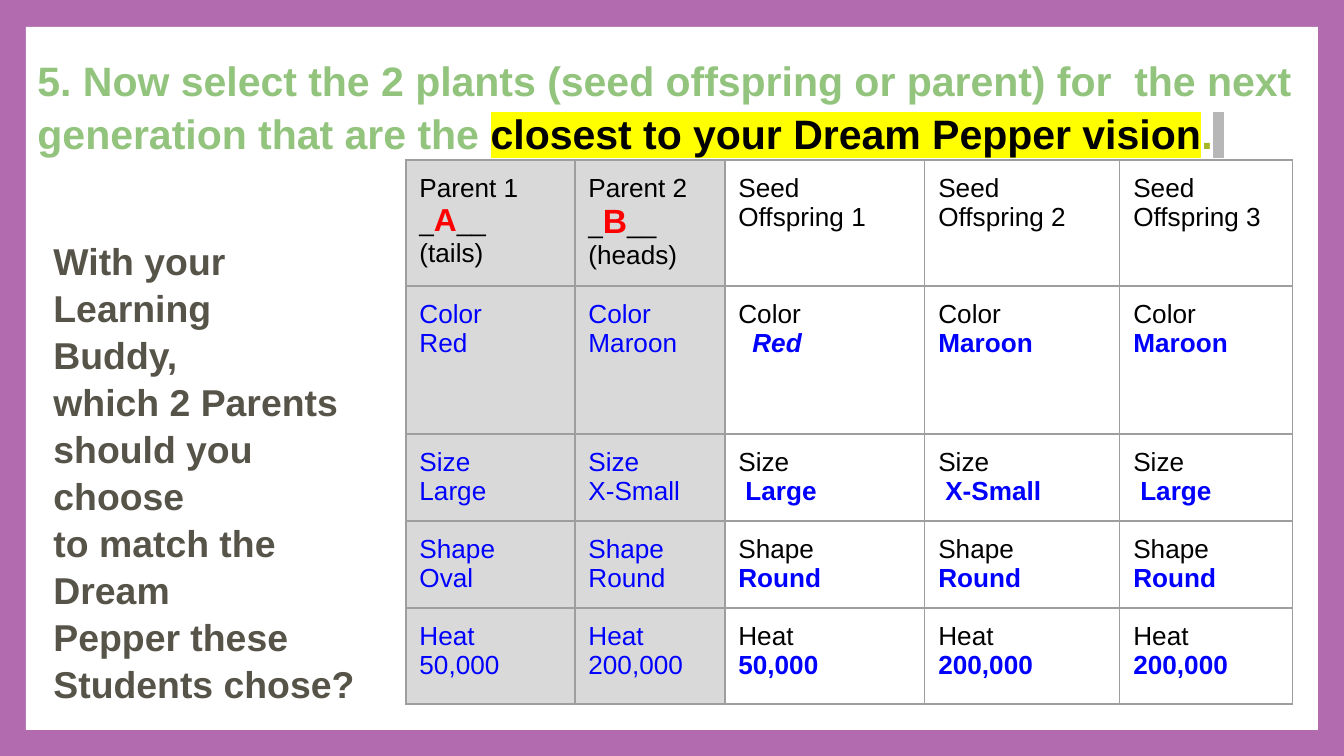
import pptx
import pptx.dml.color
import pptx.enum.shapes
import pptx.enum.text
import pptx.oxml
import pptx.oxml.ns
import pptx.util

SCALE = 9144000 / 1344
BLACK, BLUE, RED, GRAY = "000000", "0000FF", "FF0000", "D9D9D9"
COLUMNS = [169, 150, 200, 195, 173]
ROWS = [126, 148, 87, 87, 96]
PARENTS = [("Parent 1", "A", 17, "(tails)"), ("Parent 2", "B", 18, "(heads)")]
TRAITS = [
    ("Color", ["Red", "Maroon", "Red", "Maroon", "Maroon"]),
    ("Size", ["Large", "X-Small", "Large", "X-Small", "Large"]),
    ("Shape", ["Oval", "Round", "Round", "Round", "Round"]),
    ("Heat", ["50,000", "200,000", "50,000", "200,000", "200,000"]),
]
INDENTS = {("Color", 2): 14, ("Size", 2): 7, ("Size", 3): 7, ("Size", 4): 7}
QUESTION = [
    "With your Learning",
    "Buddy,",
    "which 2 Parents",
    "should you choose",
    "to match the Dream",
    "Pepper these",
    "Students chose?",
]


def px(n):
    return pptx.util.Emu(round(n * SCALE))


def color(value):
    return pptx.dml.color.RGBColor.from_string(value)


def set_all(obj, values):
    for name, value in values.items():
        setattr(obj, name, value)


def add_run(p, text, size, ink, bold=False, italic=False, highlight=None):
    r = p.add_run()
    r.text = text
    set_all(r.font, {"name": "Arial", "size": pptx.util.Pt(size), "bold": bold, "italic": italic})
    r.font.color.rgb = color(ink)
    if highlight:
        mark = pptx.oxml.parse_xml(
            f'<a:highlight {pptx.oxml.ns.nsdecls("a")}><a:srgbClr val="{highlight}"/></a:highlight>'
        )
        r.font.fill._xPr.find(pptx.oxml.ns.qn("a:solidFill")).addnext(mark)


def add_panel(s, left, top, width, height):
    sp = s.shapes.add_shape(
        pptx.enum.shapes.MSO_SHAPE.RECTANGLE, px(left), px(top), px(width), px(height)
    )
    sp.shadow.inherit = False
    sp.fill.solid()
    sp.fill.fore_color.rgb = color("FFFFFF")
    sp.line.fill.background()
    s.shapes._spTree.insert(2, sp._element)


def fill_placeholder(sp, box, lines, spacing):
    set_all(sp, dict(zip(("left", "top", "width", "height"), map(px, box))))
    tf = sp.text_frame
    sides = ("margin_left", "margin_top", "margin_right", "margin_bottom")
    set_all(tf, dict.fromkeys(sides, pptx.util.Inches(0.1)))
    set_all(tf, {
        "word_wrap": True,
        "auto_size": pptx.enum.text.MSO_AUTO_SIZE.NONE,
        "vertical_anchor": pptx.enum.text.MSO_ANCHOR.TOP,
    })
    for i, runs in enumerate(lines):
        p = tf.add_paragraph() if i else tf.paragraphs[0]
        pPr = p._p.get_or_add_pPr()
        pPr.set("marL", "0")
        pPr.set("indent", "0")
        set_all(p, {
            "alignment": pptx.enum.text.PP_ALIGN.LEFT,
            "line_spacing": spacing,
            "space_before": pptx.util.Pt(0),
            "space_after": pptx.util.Pt(0),
        })
        pPr.append(pptx.oxml.parse_xml(f'<a:buNone {pptx.oxml.ns.nsdecls("a")}/>'))
        for run in runs:
            add_run(p, *run)


def add_borders(cell):
    tcPr = cell._tc.get_or_add_tcPr()
    for i, side in enumerate(("lnL", "lnR", "lnT", "lnB")):
        tcPr.insert(i, pptx.oxml.parse_xml(
            f'<a:{side} {pptx.oxml.ns.nsdecls("a")} w="9525"><a:solidFill>'
            f'<a:srgbClr val="9E9E9E"/></a:solidFill></a:{side}>'
        ))


def fill_cell(cell, lines, shaded, indent=0):
    sides = ("margin_left", "margin_top", "margin_right", "margin_bottom")
    set_all(cell, dict.fromkeys(sides, pptx.util.Inches(0.1)))
    if shaded:
        cell.fill.solid()
        cell.fill.fore_color.rgb = color(GRAY)
    else:
        cell.fill.background()
    add_borders(cell)
    tf = cell.text_frame
    for i, runs in enumerate(lines):
        p = tf.add_paragraph() if i else tf.paragraphs[0]
        if i and indent:
            p._p.get_or_add_pPr().set("marL", str(px(indent)))
        for run in runs:
            add_run(p, *run)


def add_trait_table(s, left, top):
    frame = s.shapes.add_table(
        len(ROWS), len(COLUMNS), px(left), px(top), px(sum(COLUMNS)), px(sum(ROWS))
    )
    table = frame.table
    set_all(table, {"first_row": False, "horz_banding": False})
    for column, width in zip(table.columns, COLUMNS):
        column.width = px(width)
    for row, height in zip(table.rows, ROWS):
        row.height = px(height)
    for c, (parent, letter, size, side) in enumerate(PARENTS):
        blank = [("_", 14, BLACK), (letter, size, RED, True), ("__", 14, BLACK)]
        fill_cell(table.cell(0, c), [[(parent, 14, BLACK)], blank, [(side, 14, BLACK)]], True)
    for n in range(1, 4):
        lines = [[("Seed", 14, BLACK)], [(f"Offspring {n}", 14, BLACK)]]
        fill_cell(table.cell(0, n + 1), lines, False)
    for r, (trait, values) in enumerate(TRAITS, 1):
        for c, value in enumerate(values):
            parent = c < len(PARENTS)
            italic = (trait, c) == ("Color", 2)
            lines = [
                [(trait, 14, BLUE if parent else BLACK)],
                [(value, 14, BLUE, not parent, italic)],
            ]
            fill_cell(table.cell(r, c), lines, parent, INDENTS.get((trait, c), 0))


def main():
    prs = pptx.Presentation()
    set_all(prs, {"slide_width": px(1344), "slide_height": px(756)})
    s = prs.slides.add_slide(prs.slide_layouts[1])
    s.background.fill.solid()
    s.background.fill.fore_color.rgb = color("B16BAE")
    add_panel(s, 26, 27, 1292, 703)
    add_trait_table(s, 406, 160)
    title = [
        ("5. Now select the 2 plants (seed offspring or parent) for  the next "
         "generation that are the ", 22, "93C47D", True),
        ("closest to your Dream Pepper vision", 22, BLACK, True, False, "FFFF00"),
        (".", 22, "A6B727", True),
        (" ", 22, "A6B727", True, False, "B7B7B7"),
    ]
    fill_placeholder(s.shapes.title, (24, 39, 1297, 50), [title], 1.07)
    question = [[(line, 20, "565349", True)] for line in QUESTION]
    fill_placeholder(s.placeholders[1], (40, 222, 336, 480), question, 1.05)
    prs.save("out.pptx")


if __name__ == "__main__":
    main()
